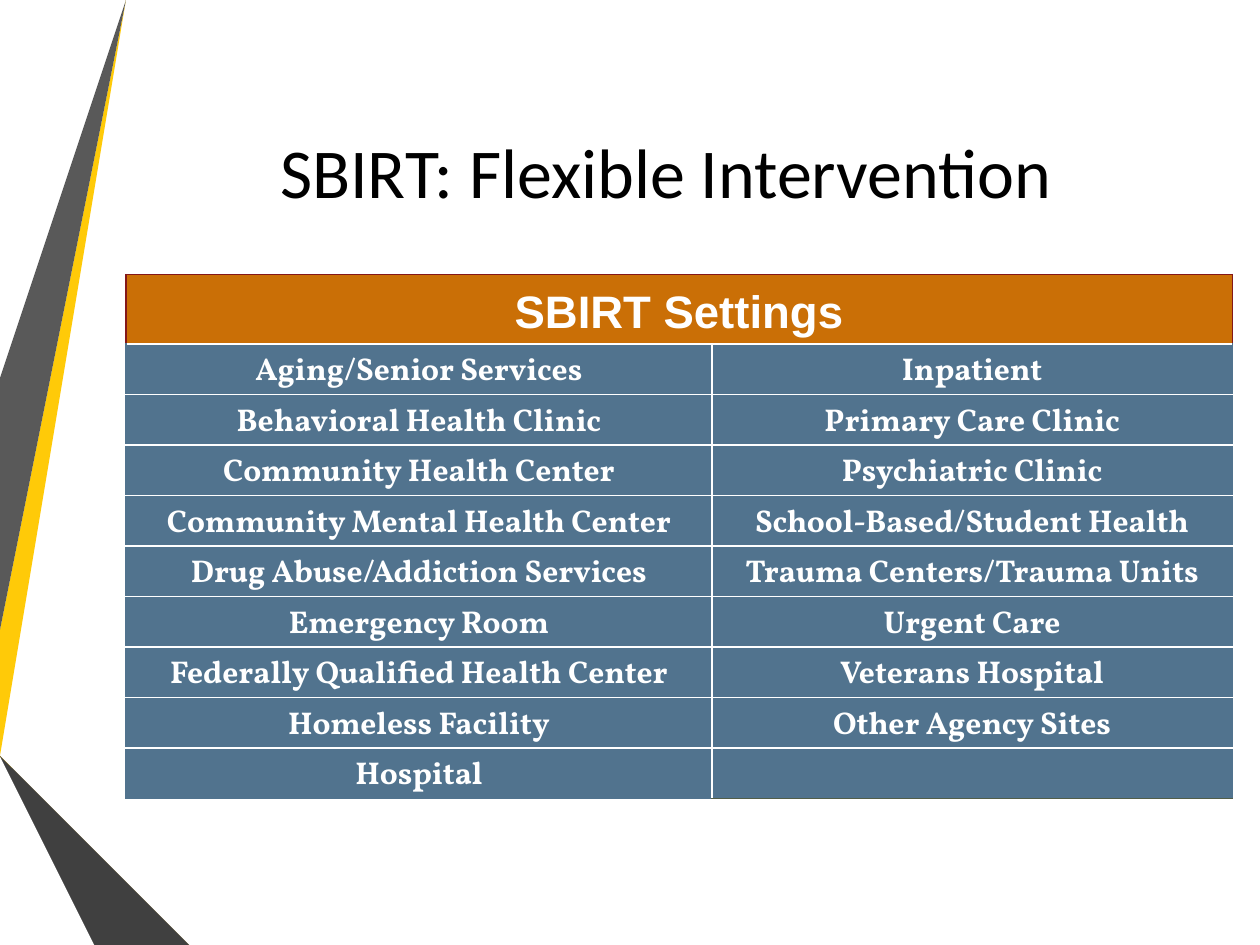
import pptx
import pptx.util
import pptx.dml.color
import pptx.enum.text
import pptx.oxml
import pptx.oxml.ns

HUES = {
    "gold": "FFCA08", "gray": "595959", "black": "262626", "olive": "846700",
    "ochre": "C59B00", "coal": "404040", "ink": "000000", "white": "FFFFFF",
    "orange": "CA6F06", "wine": "84171A", "blue": "51738E", "moss": "525E49",
}

BANDS = [
    ("gold", [(0, 5.44), (0, 5.75), (0.22, 5.79), (1.17, 0), (0.89, 0)]),
    ("gray", [(0.83, 0), (0.55, 0), (0, 3.36), (0, 5.06)]),
    ("black", [(0, 6.19), (0, 6.21), (0.93, 7.5), (0.99, 7.5)]),
    ("olive", [(0, 5.79), (0, 5.8), (1.56, 7.5), (1.63, 7.5)]),
    ("ochre", [(0, 5.79), (1.63, 7.5), (2.33, 7.5), (0.22, 5.79), (0, 5.75)]),
    ("coal", [(0, 6.19), (0.99, 7.5), (1.51, 7.5), (0, 5.86)]),
]

SITES = [
    ("Aging/Senior Services", "Inpatient"),
    ("Behavioral Health Clinic", "Primary Care Clinic"),
    ("Community Health Center", "Psychiatric Clinic"),
    ("Community Mental Health Center", "School-Based/Student Health"),
    ("Drug Abuse/Addiction Services", "Trauma Centers/Trauma Units"),
    ("Emergency Room", "Urgent Care"),
    ("Federally Qualified Health Center", "Veterans Hospital"),
    ("Homeless Facility", "Other Agency Sites"),
    ("Hospital", ""),
]


class Page:
    """Style and current slide, on a grid of 10 columns by 7.5 rows."""

    cols, rows = 10, 7.5

    def __init__(self, deck):
        self.unit = int(deck.slide_width / self.cols)
        self.slide = deck.slides.add_slide(deck.slide_layouts[5])
        self.shapes = self.slide.shapes

    def span(self, *sizes):
        return [round(size * self.unit) for size in sizes]

    def hue(self, name):
        return pptx.dml.color.RGBColor.from_string(HUES[name])

    def paint(self, item, name):
        item.fill.solid()
        item.fill.fore_color.rgb = self.hue(name)

    def label(self, frame, text, face, size, hue, bold=False):
        frame.text = text
        para = frame.paragraphs[0]
        para.alignment = pptx.enum.text.PP_ALIGN.CENTER
        for run in para.runs:
            run.font.name = face
            run.font.size = pptx.util.Pt(size)
            run.font.bold = bold
            run.font.color.rgb = self.hue(hue)
        return para

    def band(self, hue, points):
        pen = self.shapes.build_freeform(*points[0], scale=self.unit)
        pen.add_line_segments(points[1:], close=True)
        shape = pen.convert_to_shape()
        shape.shadow.inherit = False
        shape.line.fill.background()
        self.paint(shape, hue)

    def title(self, text, *box):
        """Fill the title placeholder and lift it above the bands."""
        head = self.shapes.title
        head.left, head.top, head.width, head.height = self.span(*box)
        head.text_frame.vertical_anchor = pptx.enum.text.MSO_ANCHOR.MIDDLE
        self.label(head.text_frame, text, "Calibri", 40, "ink")
        self.shapes._spTree.append(head._element)

    def edge(self, cell, hues):
        """Draw the left, right, top and bottom borders, in that order."""
        props = cell._tc.get_or_add_tcPr()
        for spot, (side, hue) in enumerate(zip("LRTB", hues)):
            props.insert(spot, pptx.oxml.parse_xml(
                f'<a:ln{side} {pptx.oxml.ns.nsdecls("a")} w="12700"><a:solidFill>'
                f'<a:srgbClr val="{HUES[hue]}"/></a:solidFill></a:ln{side}>'))

    def cell(self, cell, text, fill, hues, face="Vollkorn", size=18):
        cell.margin_left, cell.margin_right = self.span(0.06, 0.06)
        cell.margin_top = cell.margin_bottom = 0
        cell.vertical_anchor = pptx.enum.text.MSO_ANCHOR.MIDDLE
        para = self.label(cell.text_frame, text, face, size, "white", True)
        para.line_spacing = 1.15
        self.paint(cell, fill)
        self.edge(cell, hues)

    def table(self, head, data, left, top, widths, tall, row):
        box = self.span(left, top, sum(widths), tall + row * len(data))
        grid = self.shapes.add_table(len(data) + 1, len(widths), *box).table
        grid.first_row = grid.horz_banding = False
        for col, width in zip(grid.columns, self.span(*widths)):
            col.width = width
        for line, height in zip(grid.rows, self.span(tall, *[row] * len(data))):
            line.height = height
        rim = ("wine", "wine", "wine", "white")
        grid.cell(0, 0).merge(grid.cell(0, 1))
        self.cell(grid.cell(0, 0), head, "orange", rim, "Arial", 26)
        self.edge(grid.cell(0, 1), rim)
        for r, pair in enumerate(data, 1):
            feet = ("blue", "moss") if r == len(data) else ("white", "white")
            sides = (("blue", "white"), ("white", "blue"))
            for c, text in enumerate(pair):
                self.cell(grid.cell(r, c), text, "blue",
                          (*sides[c], "white", feet[c]))


def main():
    deck = pptx.Presentation()
    deck.slide_width = pptx.util.Inches(Page.cols)
    deck.slide_height = pptx.util.Inches(Page.rows)
    page = Page(deck)
    for hue, points in BANDS:
        page.band(hue, points)
    page.title("SBIRT: Flexible Intervention", 1.07, 0.5, 8.43, 1.7)
    page.table("SBIRT Settings", SITES, 1, 2.18, (4.65, 4.13), 0.55, 0.37)
    deck.save("out.pptx")


if __name__ == "__main__":
    main()
